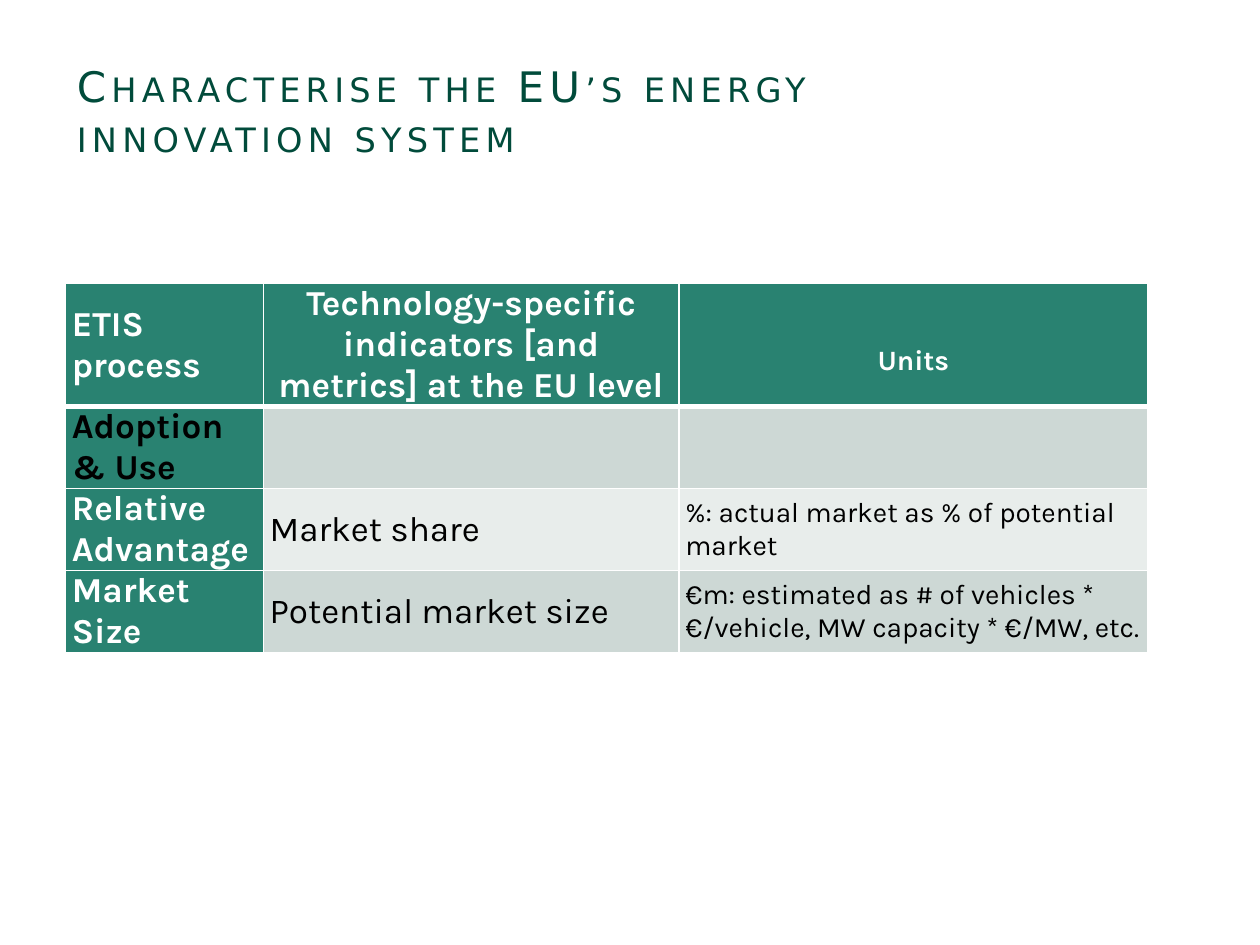
from dataclasses import dataclass

from lxml.etree import SubElement
from pptx import Presentation
from pptx.dml.color import RGBColor
from pptx.enum.text import MSO_ANCHOR, MSO_AUTO_SIZE, PP_ALIGN
from pptx.oxml.ns import qn
from pptx.util import Inches, Pt

DARK_GREEN = RGBColor(0x01, 0x4B, 0x3B)
GREEN = RGBColor(0x29, 0x82, 0x71)
BAND_DARK = RGBColor(0xCD, 0xD8, 0xD5)
BAND_LIGHT = RGBColor(0xE8, 0xED, 0xEB)
WHITE = RGBColor(0xFF, 0xFF, 0xFF)
BLACK = RGBColor(0, 0, 0)

COLUMN_WIDTHS = (1.57, 3.3, 3.72)
ROW_HEIGHTS = (0.97, 0.65, 0.65, 0.65)


@dataclass(frozen=True)
class Entry:
    text: str
    size: int = 20
    color: RGBColor = BLACK
    bold: bool = False
    align: PP_ALIGN = PP_ALIGN.LEFT


def heading(text: str, size: int = 20, color: RGBColor = WHITE,
            align: PP_ALIGN = PP_ALIGN.LEFT) -> Entry:
    return Entry(text, size, color, True, align)


ENTRIES = (
    (heading("ETIS process"),
     heading("Technology-specific indicators [and metrics] at the EU level",
             align=PP_ALIGN.CENTER),
     heading("\vUnits", 16, align=PP_ALIGN.CENTER)),
    (heading("Adoption & Use", color=BLACK), Entry(""), Entry("")),
    (heading("Relative Advantage"), Entry("Market share"),
     Entry("%: actual market as % of potential market", 16)),
    (heading("Market Size"), Entry("Potential market size"),
     Entry("€m: estimated as # of vehicles * €/vehicle, MW capacity * €/MW, etc.", 16)),
)


def add_borders(cell, row: int) -> None:
    """Draw white borders, thicker between the header and the body."""
    properties = cell._tc.get_or_add_tcPr()
    thick_side = {0: "B", 1: "T"}.get(row)
    for side in "LRTB":
        width = Pt(3 if side == thick_side else 1)
        line = SubElement(properties, qn(f"a:ln{side}"), w=str(width))
        fill = SubElement(line, qn("a:solidFill"))
        SubElement(fill, qn("a:srgbClr"), val=str(WHITE))


def fill_cell(cell, entry: Entry, row: int, column: int) -> None:
    add_borders(cell, row)
    cell.fill.solid()
    band = BAND_DARK if row % 2 else BAND_LIGHT
    cell.fill.fore_color.rgb = GREEN if row == 0 or column == 0 else band
    cell.vertical_anchor = MSO_ANCHOR.MIDDLE
    cell.margin_left = cell.margin_right = Inches(0.05)
    cell.margin_top = cell.margin_bottom = 0
    if not entry.text:
        return
    cell.text = entry.text
    paragraph = cell.text_frame.paragraphs[0]
    paragraph.alignment = entry.align
    font = paragraph.font
    font.name, font.size, font.bold = "Karla", Pt(entry.size), entry.bold
    font.color.rgb = entry.color


def add_title(slide) -> None:
    title = slide.shapes.title
    title.left, title.top = Inches(0.51), Inches(0.21)
    title.width, title.height = Inches(6.93), Inches(1.34)
    frame = title.text_frame
    frame.text = "Characterise the EU’s energy innovation system"
    frame.word_wrap = True
    frame.auto_size = MSO_AUTO_SIZE.NONE
    frame.vertical_anchor = MSO_ANCHOR.MIDDLE
    paragraph = frame.paragraphs[0]
    paragraph.alignment = PP_ALIGN.LEFT
    font = paragraph.font
    font.name, font.size = "DejaVu Sans", Pt(24)
    font.color.rgb = DARK_GREEN
    run_properties = paragraph.runs[0]._r.get_or_add_rPr()
    run_properties.set("cap", "small")
    run_properties.set("spc", "300")


def add_indicator_table(slide) -> None:
    table = slide.shapes.add_table(
        len(ROW_HEIGHTS), len(COLUMN_WIDTHS), Inches(0.52), Inches(2.25),
        Inches(sum(COLUMN_WIDTHS)), Inches(sum(ROW_HEIGHTS))).table
    table.first_col = True
    for column, width in zip(table.columns, COLUMN_WIDTHS):
        column.width = Inches(width)
    for row, height in zip(table.rows, ROW_HEIGHTS):
        row.height = Inches(height)
    for r, entries in enumerate(ENTRIES):
        for c, entry in enumerate(entries):
            fill_cell(table.cell(r, c), entry, r, c)


def main() -> None:
    deck = Presentation()
    deck.slide_width, deck.slide_height = Inches(10), Inches(7.5)
    slide = deck.slides.add_slide(deck.slide_layouts[5])
    add_title(slide)
    add_indicator_table(slide)
    deck.save("out.pptx")


if __name__ == "__main__":
    main()
